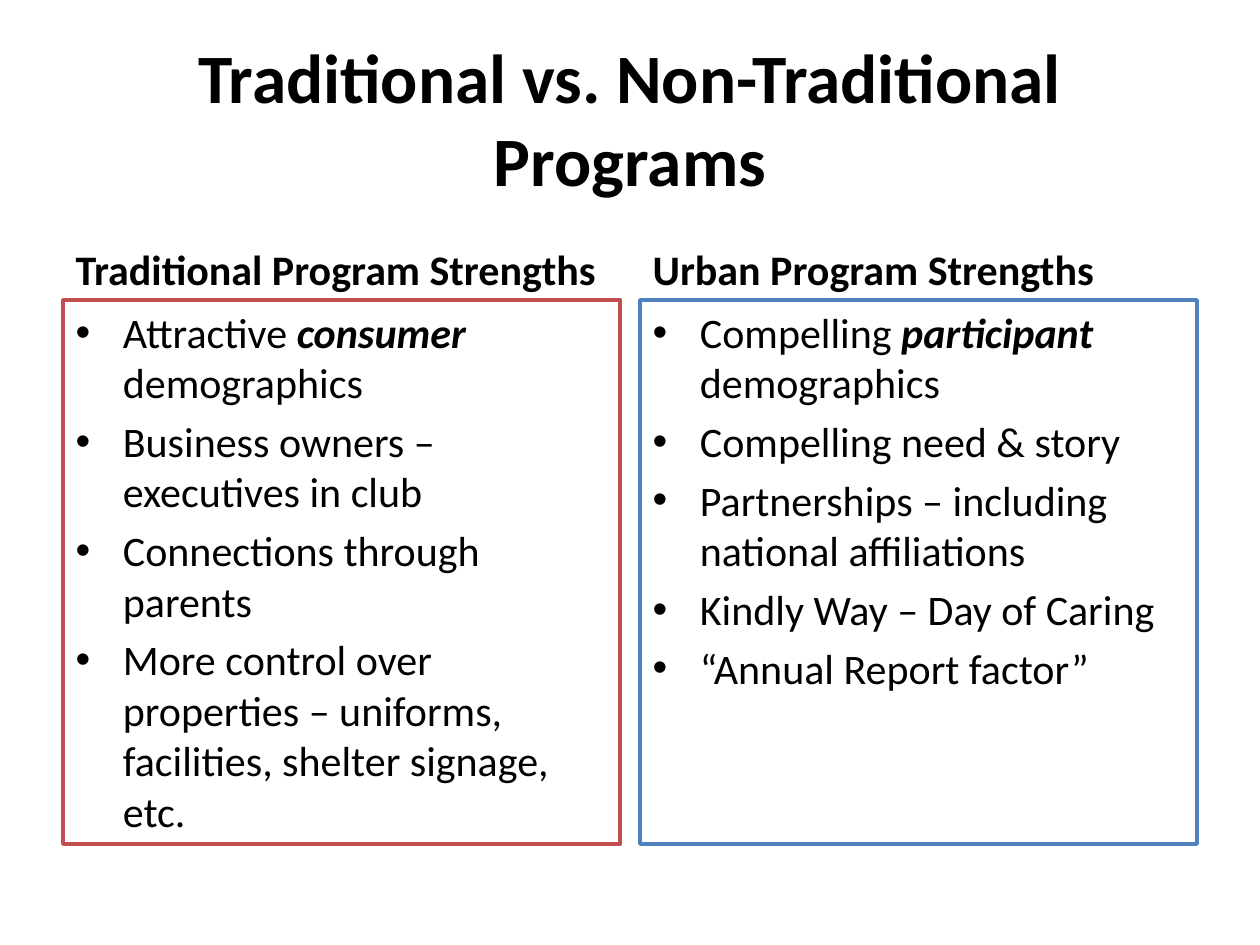
from pptx import Presentation
from pptx.dml.color import RGBColor
from pptx.enum.text import MSO_ANCHOR, MSO_AUTO_SIZE, PP_ALIGN
from pptx.util import Pt

NO_FIT = MSO_AUTO_SIZE.NONE
MIDDLE, BOTTOM, TOP = MSO_ANCHOR.MIDDLE, MSO_ANCHOR.BOTTOM, MSO_ANCHOR.TOP
CENTER, LEFT = PP_ALIGN.CENTER, PP_ALIGN.LEFT
EMU_PER_PX = 914400 / 126
COMPARISON_LAYOUT = 4
COLORS = {"text": "000000", "panel": "FFFFFF", "red": "C0504D", "blue": "4F81BD"}


def place(box, left, top, width, height, anchor):
    box.left, box.top, box.width, box.height = (
        round(value * EMU_PER_PX) for value in (left, top, width, height))
    box.text_frame.auto_size = NO_FIT
    box.text_frame.vertical_anchor = anchor
    box.text_frame.word_wrap = True


def style(para, size, bold=None, align=LEFT):
    para.alignment = align
    para.font.name = "Calibri"
    para.font.size = Pt(size)
    para.font.bold = bold
    para.font.color.rgb = RGBColor.from_string(COLORS["text"])


deck = Presentation()
deck.slide_width = round(1260 * EMU_PER_PX)
deck.slide_height = round(945 * EMU_PER_PX)
page = deck.slides.add_slide(deck.slide_layouts[COMPARISON_LAYOUT])

# Title
title = page.shapes.title
place(title, 63, 38, 1134, 158, MIDDLE)
title.text_frame.text = "Traditional vs. Non-Traditional Programs"
style(title.text_frame.paragraphs[0], 39.6, True, CENTER)

# Columns: heading index, left edge, border, heading, items (lists hold runs, the
# middle one emphasised)
columns = [
    (1, 63, "red", "Traditional Program Strengths", [
        ["Attractive", " consumer", " demographics"],
        ["Business owners – executives in club"],
        ["Connections through parents"],
        ["More control over properties – uniforms, facilities, shelter signage, etc."],
    ]),
    (3, 640, "blue", "Urban Program Strengths", [
        ["Compelling", " participant", " demographics"],
        ["Compelling need & story"],
        ["Partnerships – including national affiliations"],
        ["Kindly Way – Day of Caring"],
        ["“Annual Report factor”"],
    ]),
]

for index, left, border, heading_text, items in columns:
    # Heading
    heading = page.placeholders[index]
    place(heading, left, 212, 557, 88, BOTTOM)
    heading.text_frame.text = heading_text
    heading_para = heading.text_frame.paragraphs[0]
    heading_para.space_before = Pt(0)
    style(heading_para, 24, True)

    # Framed list
    panel = page.placeholders[index + 1]
    place(panel, left, 300, 557, 544, TOP)
    panel.fill.solid()
    panel.fill.fore_color.rgb = RGBColor.from_string(COLORS["panel"])
    panel.line.color.rgb = RGBColor.from_string(COLORS[border])
    panel.line.width = Pt(2)
    frame = panel.text_frame
    for number, parts in enumerate(items):
        para = frame.add_paragraph() if number else frame.paragraphs[0]
        if number == 0:
            para.space_before = Pt(0)
        style(para, 24)
        for position, words in enumerate(parts):
            span = para.add_run()
            span.text = words
            if position == 1:
                span.font.bold = span.font.italic = True

deck.save("out.pptx")
